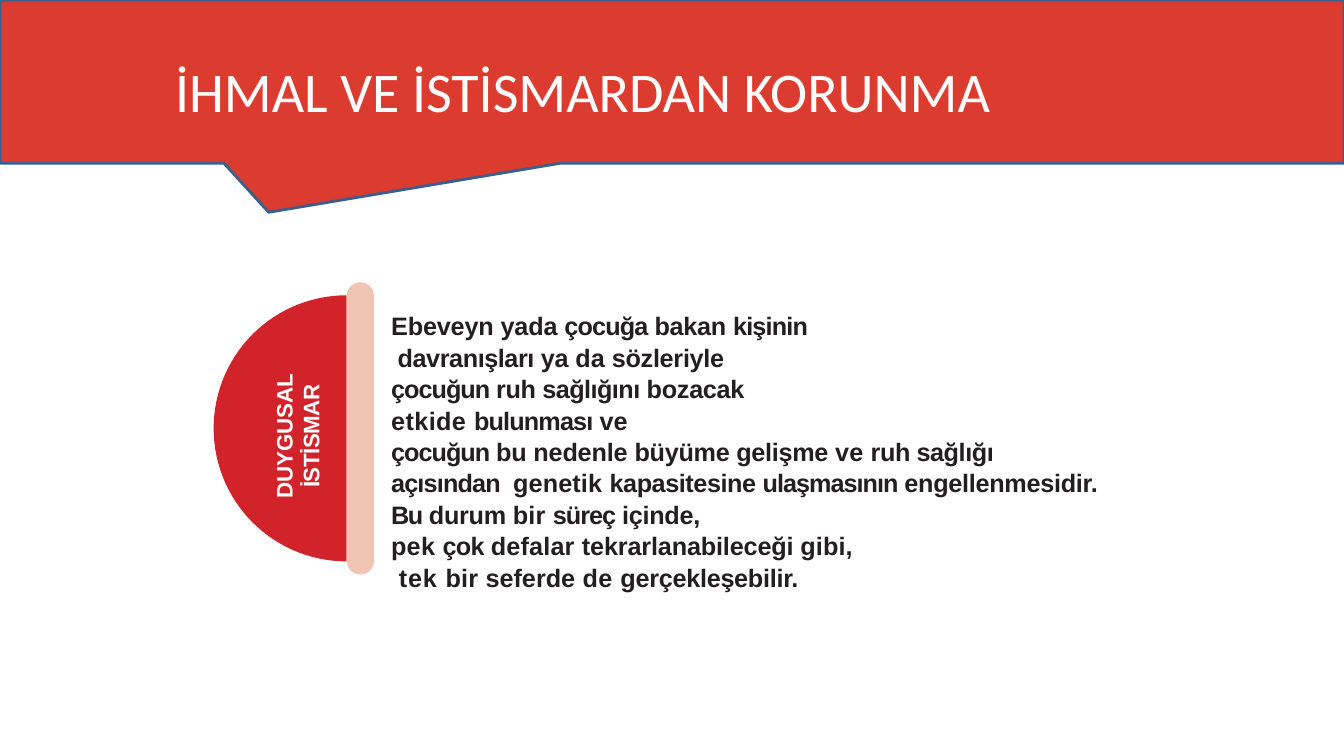
from dataclasses import dataclass
from math import cos, pi, sin

from lxml.etree import SubElement
from pptx import Presentation
from pptx.dml.color import RGBColor
from pptx.enum.shapes import MSO_SHAPE
from pptx.enum.text import MSO_ANCHOR, MSO_AUTO_SIZE, PP_ALIGN
from pptx.oxml.ns import qn
from pptx.util import Emu, Inches, Pt


@dataclass(frozen=True)
class Theme:
    banner: str = "DC3C30"
    banner_line: str = "3A5F8C"
    disc: str = "D2232A"
    bar: str = "F0C5B4"
    light: str = "FFFFFF"
    dark: str = "231F20"
    title_font: str = "Calibri"
    text_font: str = "Arial"
    title_size: float = 40
    label_size: float = 16
    body_size: float = 18


TITLE = [[[("İHMAL VE İSTİSMARDAN KORUNMA", 0)]]]
LABEL = [[[("DUYGUSAL", 0)], [("İSTİSMAR", -0.3)]]]
DEFINITION = [
    [
        [("Ebeveyn yada ", -0.1), ("çocuğa ", -0.6), ("bakan ", -0.2), ("kişinin", -0.6)],
        [(" davranışları ", -0.3), ("ya ", -0.2), ("da ", 0), ("sözleriyle", -0.2)],
    ],
    [
        [("çocuğun ", -0.7), ("ruh ", -0.3), ("sağlığını ", -0.4), ("bozacak", -0.2)],
        [("etkide ", 0.3), ("bulunması ", -0.6), ("ve", 0.1)],
    ],
    [
        [("çocuğun ", -0.7), ("bu ", -0.2), ("nedenle ", -0.1), ("büyüme gelişme ", -0.2),
         ("ve ", 0.1), ("ruh sağlığı", -0.3)],
        [("açısından  ", -0.6), ("genetik ", 0.1), ("kapasitesine ", -0.3),
         ("ulaşmasının ", -0.7), ("engellenmesidir.", -0.2)],
    ],
    [[("Bu ", -1), ("durum ", -0.2), ("bir ", 0.1), ("süreç ", -0.7), ("içinde,", -0.2)]],
    [
        [("pek ", 0.2), ("çok ", -0.5), ("defalar ", 0.1), ("tekrarlanabileceği ", -0.1),
         ("gibi,", 0.1)],
        [(" tek ", 0.6), ("bir ", 0.1), ("seferde", 0), (" de ", 0.3), ("gerçekleşebilir.", -0.2)],
    ],
]


def apply(target, values):
    for name, value in values.items():
        setattr(target, name, value)


class SlideBuilder:
    columns, rows = 160, 90

    def __init__(self, presentation, theme):
        self.theme = theme
        self.column = presentation.slide_width / self.columns
        self.row = presentation.slide_height / self.rows
        self.slide = presentation.slides.add_slide(presentation.slide_layouts[1])

    def box(self, left, top, width, height):
        return [Emu(round(length * unit)) for length, unit in
                zip((left, top, width, height), (self.column, self.row) * 2)]

    def paint(self, shape, fill, line=None):
        shape.shadow.inherit = False
        shape.fill.solid()
        shape.fill.fore_color.rgb = RGBColor.from_string(fill)
        if line:
            shape.line.color.rgb = RGBColor.from_string(line)
            shape.line.width = Pt(2)
        else:
            shape.line.fill.background()

    def preset(self, kind, area, adjustments, fill, line=None):
        shape = self.slide.shapes.add_shape(kind, *self.box(*area))
        for index, value in enumerate(adjustments):
            shape.adjustments[index] = value
        self.paint(shape, fill, line)
        return shape

    def banner(self, area, adjustments):
        shape = self.preset(MSO_SHAPE.RECTANGULAR_CALLOUT, area, adjustments,
                            self.theme.banner, self.theme.banner_line)
        self.slide.shapes.element.insert(2, shape.element)

    def half_disc(self, center_column, center_row, radius, steps=60):
        angles = [pi / 2 + pi * step / steps for step in range(steps + 1)]
        points = [(round((center_column + radius * cos(angle)) * self.column),
                   round((center_row - radius * sin(angle)) * self.row)) for angle in angles]
        builder = self.slide.shapes.build_freeform(*points[0])
        builder.add_line_segments(points[1:], close=True)
        self.paint(builder.convert_to_shape(), self.theme.disc)

    def text(self, shape, area, paragraphs, font, frame=None, layout=None, indent=(0, 0)):
        apply(shape, dict(zip(("left", "top", "width", "height"), self.box(*area))))
        text_frame = shape.text_frame
        apply(text_frame, {"word_wrap": True, "auto_size": MSO_AUTO_SIZE.NONE,
                           "margin_left": 0, "margin_right": 0,
                           "margin_top": Inches(0.01), "margin_bottom": 0,
                           "vertical_anchor": MSO_ANCHOR.TOP, **(frame or {})})
        color = font.pop("color")
        for number, lines in enumerate(paragraphs):
            paragraph = text_frame.add_paragraph() if number else text_frame.paragraphs[0]
            apply(paragraph, {"alignment": PP_ALIGN.LEFT, "space_after": Pt(0),
                              "space_before": Pt(0 if number else 1), **(layout or {})})
            properties = paragraph.element.get_or_add_pPr() if hasattr(paragraph, "element") \
                else paragraph._p.get_or_add_pPr()
            for name, value in zip(("marL", "indent"), indent):
                properties.set(name, str(Inches(value)))
            SubElement(properties, qn("a:buNone"))
            for line_number, runs in enumerate(lines):
                if line_number:
                    paragraph.add_line_break()
                for words, spacing in runs:
                    run = paragraph.add_run()
                    run.text = words
                    apply(run.font, font)
                    run.font.color.rgb = RGBColor.from_string(color)
                    run.font._element.set("spc", str(round(spacing * 100)))

    def title(self, area, paragraphs):
        self.text(self.slide.shapes.title, area, paragraphs,
                  {"name": self.theme.title_font, "size": Pt(self.theme.title_size),
                   "bold": False, "color": self.theme.light},
                  {"vertical_anchor": MSO_ANCHOR.MIDDLE}, {"alignment": PP_ALIGN.CENTER})

    def body(self, area, paragraphs):
        self.text(self.slide.placeholders[1], area, paragraphs,
                  {"name": self.theme.text_font, "size": Pt(self.theme.body_size),
                   "bold": True, "color": self.theme.dark}, layout={"line_spacing": 1.04})

    def vertical_label(self, area, paragraphs):
        shape = self.slide.shapes.add_textbox(*self.box(*area))
        self.text(shape, area, paragraphs,
                  {"name": self.theme.text_font, "size": Pt(self.theme.label_size),
                   "bold": True, "color": self.theme.light}, indent=(0.12, -0.11))
        shape.text_frame._txBody.bodyPr.set("vert", "vert270")


def main():
    presentation = Presentation()
    apply(presentation, {"slide_width": Inches(13.33), "slide_height": Inches(7.5)})
    theme = Theme()
    builder = SlideBuilder(presentation, theme)
    builder.banner((0, 0, 160, 19.44), (-0.3, 0.8))
    builder.title((0, 4.32, 138.72, 12.72), TITLE)
    builder.half_disc(41.28, 51, 15.84)
    builder.preset(MSO_SHAPE.ROUNDED_RECTANGLE, (41.28, 33.6, 3.24, 34.8), (0.5,), theme.bar)
    builder.vertical_label((32.16, 42.6, 6.48, 16.92), LABEL)
    builder.body((46.56, 36.72, 86.52, 29.16), DEFINITION)
    presentation.save("out.pptx")


if __name__ == "__main__":
    main()
